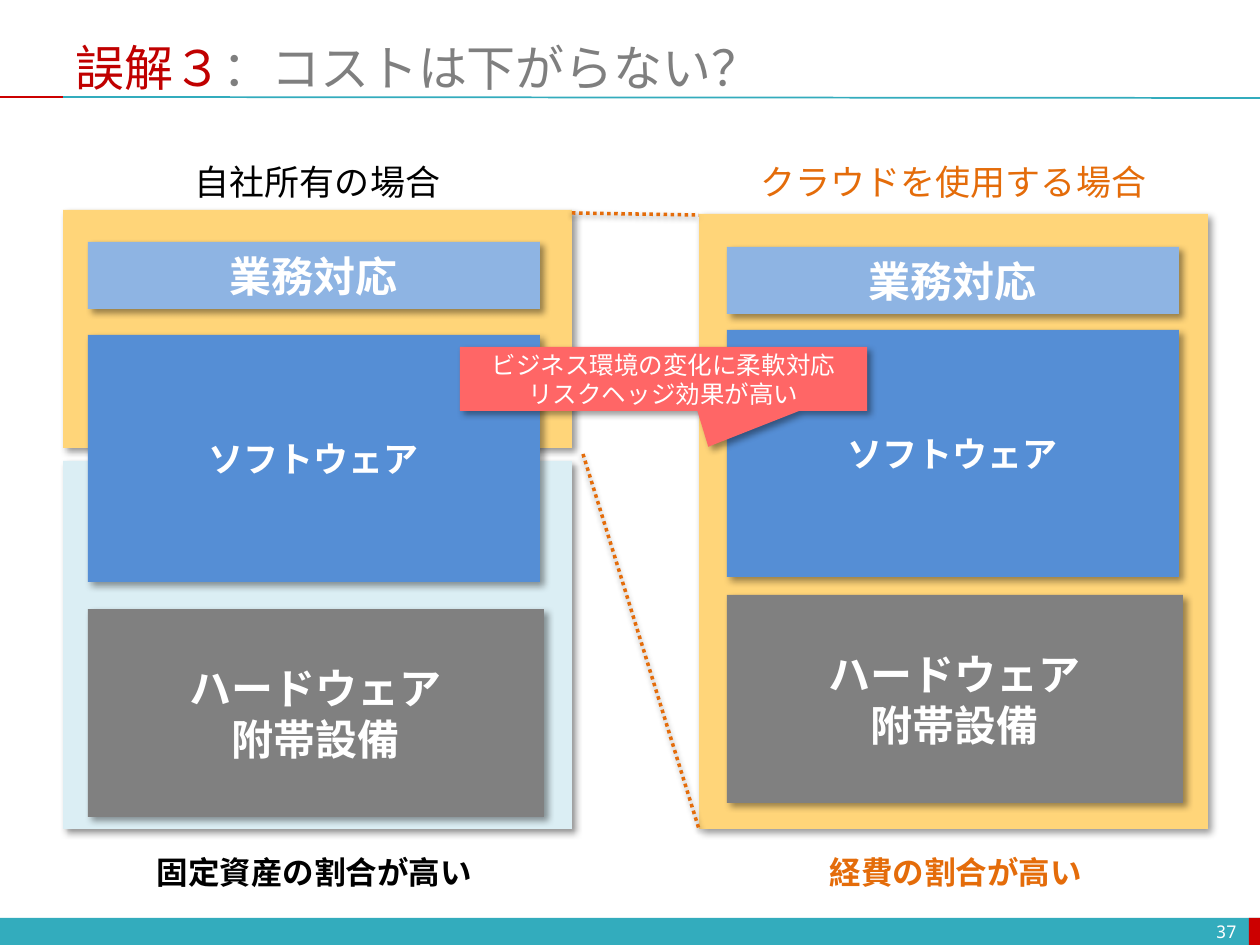
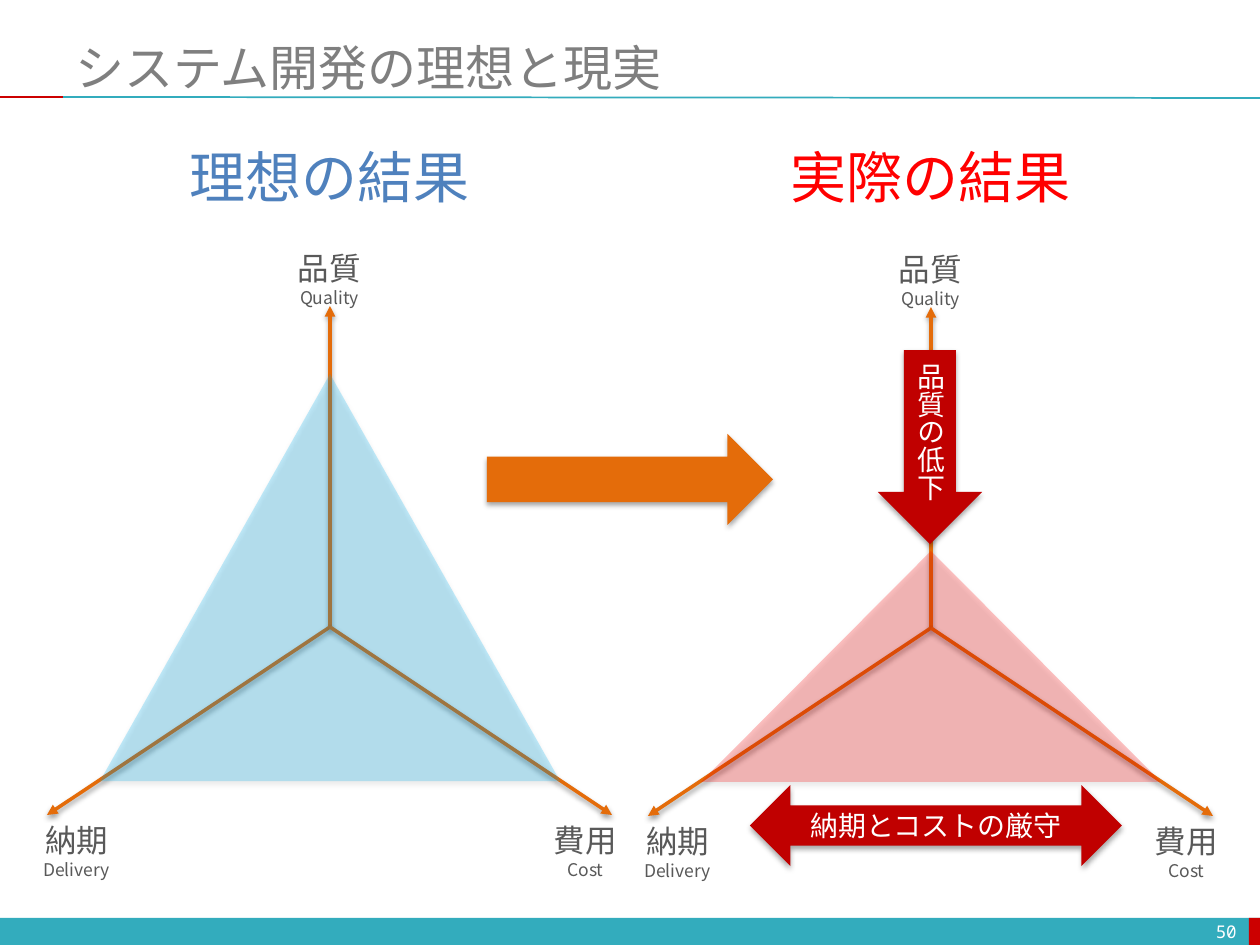
from lxml import etree
from pptx import Presentation
from pptx.dml.color import RGBColor
from pptx.enum.dml import MSO_LINE
from pptx.enum.shapes import MSO_CONNECTOR, MSO_SHAPE
from pptx.enum.text import MSO_ANCHOR, MSO_AUTO_SIZE, PP_ALIGN
from pptx.oxml.ns import qn
from pptx.util import Pt

PX = 914400 / 126
FONT, NUMBER_FONT = "Noto Sans CJK JP", "Noto Sans Mono"
RECT, CALLOUT = MSO_SHAPE.RECTANGLE, MSO_SHAPE.RECTANGULAR_CALLOUT
TRIANGLE, DOWN = MSO_SHAPE.ISOSCELES_TRIANGLE, MSO_SHAPE.DOWN_ARROW
RIGHT, BOTH_WAYS = MSO_SHAPE.RIGHT_ARROW, MSO_SHAPE.LEFT_RIGHT_ARROW
STRAIGHT, DOTTED = MSO_CONNECTOR.STRAIGHT, MSO_LINE.ROUND_DOT
MIDDLE, TOP = MSO_ANCHOR.MIDDLE, MSO_ANCHOR.TOP
ALIGN_LEFT, CENTER, ALIGN_RIGHT = PP_ALIGN.LEFT, PP_ALIGN.CENTER, PP_ALIGN.RIGHT
GROW, FIXED = MSO_AUTO_SIZE.SHAPE_TO_FIT_TEXT, MSO_AUTO_SIZE.NONE

COLORS = {
    "teal": "33ACBD", "band red": "CC0000", "dark red": "C00000", "red": "FF0000",
    "title": "7F7F7F", "label": "595959", "white": "FFFFFF", "black": "000000",
    "orange": "E46C0A", "expense": "FFD579", "asset": "DBEEF4", "hardware": "808080",
    "software": "558ED5", "business": "8EB4E3", "callout": "FF6666",
    "ideal": "4F81BD", "sky": "00B0F0",
}
# Shadows: opacity %, blur pt, distance pt, direction in degrees
BLOCK_SHADOW = (40, 4, 3, 45)
ARROW_SHADOW = (35, 3.1, 1.8, 90)
LINE_SHADOW = (38, 3.1, 1.6, 90)


def emu(*lengths):
    return [round(length * PX) for length in lengths]


def color(name):
    return RGBColor.from_string(COLORS[name])


def add_shadow(effects, shadow):
    opacity, blur, distance, direction = shadow
    outer = etree.SubElement(effects, qn("a:outerShdw"), blurRad=str(Pt(blur)),
                             dist=str(Pt(distance)), dir=str(direction * 60000),
                             rotWithShape="0")
    black = etree.SubElement(outer, qn("a:srgbClr"), val=COLORS["black"])
    etree.SubElement(black, qn("a:alpha"), val=str(opacity * 1000))


def style(para, size, fill, bold=False, align=CENTER, font=FONT):
    para.alignment = align
    para.font.size, para.font.bold, para.font.name = Pt(size), bold, font
    para.font.color.rgb = color(fill)
    defaults = para._p.pPr.find(qn("a:defRPr"))
    etree.SubElement(defaults, qn("a:ea"), typeface=font)


def write(shape, lines, size, fill, **options):
    """Fill a shape with lines; size is one number or one for each line."""
    frame = shape.text_frame
    frame.text = "\n".join(lines)
    sizes = size if isinstance(size, tuple) else (size,) * len(lines)
    for para, points in zip(frame.paragraphs, sizes):
        style(para, points, fill, **options)
    return frame


def add_label(page, box, lines, size, fill, **options):
    frame = write(page.shapes.add_textbox(*emu(*box)), lines, size, fill, **options)
    frame.word_wrap, frame.auto_size, frame.vertical_anchor = False, GROW, TOP


def add_block(page, kind, box, fill, shadow=None, opacity=None):
    shape = page.shapes.add_shape(kind, *emu(*box))
    shape.fill.solid()
    shape.fill.fore_color.rgb = color(fill)
    shape.line.fill.background()
    shape.shadow.inherit = False
    properties = shape._element.spPr
    if shadow:
        add_shadow(properties.find(qn("a:effectLst")), shadow)
    if opacity:
        paint = properties.find(qn("a:solidFill")).find(qn("a:srgbClr"))
        etree.SubElement(paint, qn("a:alpha"), val=str(opacity * 1000))
    shape.text_frame.vertical_anchor = MIDDLE
    return shape


def add_line(page, start, end, fill, width, shadow=None, dash=None, arrow=False):
    connector = page.shapes.add_connector(STRAIGHT, *emu(*start, *end))
    connector.line.color.rgb, connector.line.width = color(fill), Pt(width)
    if dash:
        connector.line.dash_style = dash
    properties = connector._element.spPr
    if arrow:
        etree.SubElement(properties.find(qn("a:ln")), qn("a:tailEnd"), type="triangle")
    effects = etree.SubElement(properties, qn("a:effectLst"))
    if shadow:
        add_shadow(effects, shadow)


def add_page(deck, title, number):
    """Page with bands, rules, title spans (text, colour) and page number."""
    page = deck.slides.add_slide(deck.slide_layouts[5])
    add_block(page, RECT, (0, 918, 1260, 27), "teal")
    add_block(page, RECT, (1249, 918, 11, 27), "band red")
    add_line(page, (63, 97), (1260, 98), "teal", 1)
    add_line(page, (0, 97), (63, 97), "band red", 1)

    heading = page.shapes.title
    heading.left, heading.top, heading.width, heading.height = emu(63, 38, 1197, 58)
    frame = heading.text_frame
    frame.vertical_anchor, frame.auto_size = MIDDLE, FIXED
    para = frame.paragraphs[0]
    style(para, 28, "title", align=ALIGN_LEFT)
    for text, fill in title:
        span = para.add_run()
        span.text = text
        span.font.color.rgb = color(fill)

    number_box = page.shapes.add_textbox(*emu(955, 916, 294, 30))
    frame = write(number_box, [number], 10, "white", align=ALIGN_RIGHT, font=NUMBER_FONT)
    frame.word_wrap, frame.vertical_anchor = True, MIDDLE
    return page


def add_cost_stack(page, box, panels, inset, tops, heading, note, fill):
    """Panels (top, height, colour) behind three blocks, with text above and below.

    heading and note are (text, left, width), measured from the box.
    """
    left, top, width, height = box
    for panel_top, panel_height, panel_fill in panels:
        add_block(page, RECT, (left, top + panel_top, width, panel_height),
                  panel_fill, BLOCK_SHADOW)
    blocks = [
        (["業務対応"], 24, 452, 67, "business"),
        (["ソフトウェア"], 20, 452, 247, "software"),
        (["ハードウェア", "附帯設備"], 24, 456, 208, "hardware"),
    ]
    for offset, (lines, size, block_width, block_height, paint) in zip(tops, blocks):
        block = add_block(page, RECT, (left + inset, top + offset, block_width, block_height),
                          paint, BLOCK_SHADOW)
        write(block, lines, size, "white", bold=True)
    text, offset, text_width = heading
    add_label(page, (left + offset, 154, text_width, 55), [text], 20, fill)
    text, offset, text_width = note
    add_label(page, (left + offset, top + height + 18, text_width, 50), [text], 18, fill,
              bold=True)


def build_cost_page(deck):
    page = add_page(deck, [("誤解３", "dark red"), ("：コストは下がらない？", "title")], "37")
    add_cost_stack(page, (699, 214, 509, 615), [(0, 615, "expense")], 28, (33, 116, 381),
                   ("クラウドを使用する場合", 47, 415), ("経費の割合が高い", 117, 280), "orange")
    add_cost_stack(page, (63, 210, 509, 619), [(251, 368, "asset"), (0, 238, "expense")],
                   25, (32, 125, 399),
                   ("自社所有の場合", 118, 273), ("固定資産の割合が高い", 79, 344), "black")

    # Benefit callout
    callout = add_block(page, CALLOUT, (460, 347, 407, 64), "callout", BLOCK_SHADOW)
    callout.adjustments[0], callout.adjustments[1] = 0.11, 1.06
    write(callout, ["ビジネス環境の変化に柔軟対応", "リスクヘッジ効果が高い"], 14, "white")

    # Dotted guides from the expense part to the full stack
    for start, end in [((572, 213), (699, 215)), ((583, 454), (699, 829))]:
        add_line(page, start, end, "orange", 2, LINE_SHADOW, DOTTED)


def add_qcd_chart(page, left, top, rise, fill):
    """Three axes with labels and a result triangle of the given height."""
    center = (left + 301, top + 384)
    for x, y in [(301, 63), (18, 572), (583, 572)]:
        add_line(page, center, (left + x, top + y), "orange", 2, LINE_SHADOW, arrow=True)
    add_block(page, TRIANGLE, (left + 71, top + 538 - rise, 460, rise), fill,
              ARROW_SHADOW, opacity=24)
    labels = [("品質", "Quality", 256, 0, 89), ("納期", "Delivery", 0, 572, 95),
              ("費用", "Cost", 512, 572, 89)]
    for name, english, x, y, width in labels:
        add_label(page, (left + x, top + y, width, 72), [name, english], (18, 10), "label")


def build_result_page(deck):
    page = add_page(deck, [("システム開発の理想と現実", "title")], "50")
    add_qcd_chart(page, 29, 243, 407, "sky")
    add_qcd_chart(page, 630, 244, 231, "red")

    # Arrows
    drop = add_block(page, DOWN, (878, 350, 104, 194), "dark red", ARROW_SHADOW)
    frame = write(drop, ["品質の低下"], 16, "white")
    frame._txBody.bodyPr.set("vert", "eaVert")
    keep = add_block(page, BOTH_WAYS, (750, 785, 372, 81), "dark red", ARROW_SHADOW)
    write(keep, ["納期とコストの厳守"], 16, "white")
    add_block(page, RIGHT, (487, 434, 286, 91), "orange", ARROW_SHADOW)

    # Headings
    for left, text, fill in [(175, "理想の結果", "ideal"), (776, "実際の結果", "red")]:
        add_label(page, (left, 136, 309, 81), [text], 32, fill)


def main():
    deck = Presentation()
    deck.slide_width, deck.slide_height = emu(1260, 945)
    build_cost_page(deck)
    build_result_page(deck)
    deck.save("out.pptx")


if __name__ == "__main__":
    main()
